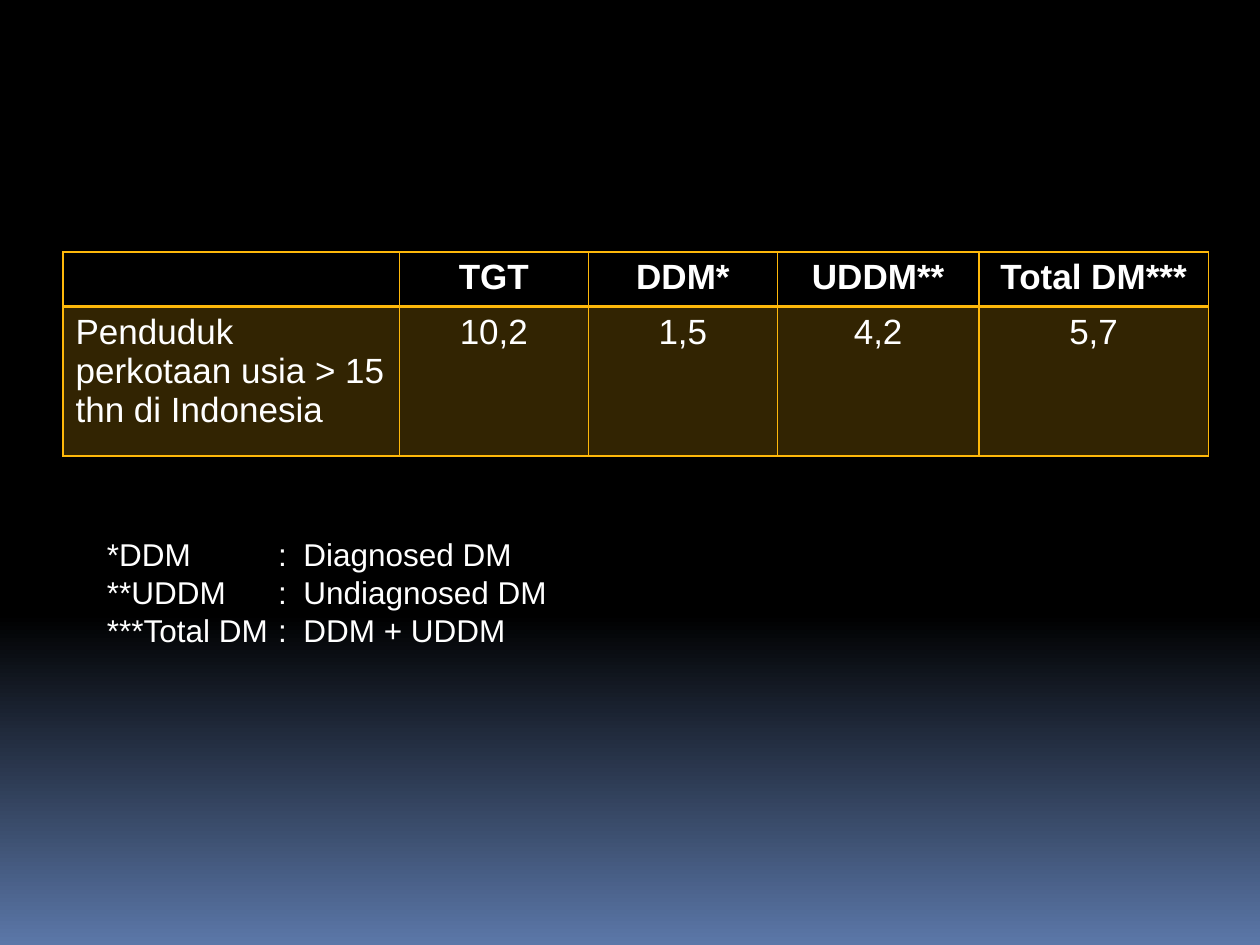
import pptx
import pptx.dml.color
import pptx.enum.text
import pptx.oxml
import pptx.oxml.ns
import pptx.util
import lxml.etree

WIDTH, HEIGHT = 10, 7.5
ALIGN = pptx.enum.text.PP_ALIGN
HEADER = ["", "TGT", "DDM*", "UDDM**", "Total DM***"]
VALUES = ["Penduduk perkotaan usia > 15 thn di Indonesia", "10,2", "1,5", "4,2", "5,7"]
LEGEND = [("*DDM", "Diagnosed DM"), ("**UDDM", "Undiagnosed DM"), ("***Total DM", "DDM + UDDM")]


def color(value):
    return pptx.dml.color.RGBColor.from_string(value)


def add_xml(parent, tag, **attributes):
    names = {name: str(value) for name, value in attributes.items()}
    return lxml.etree.SubElement(parent, pptx.oxml.ns.qn(tag), names)


class SlideBuilder:
    white, gold = "FFFFFF", "FEB80A"

    def __init__(self, deck):
        self.slide = deck.slides.add_slide(deck.slide_layouts[6])
        self.width, self.height = deck.slide_width, deck.slide_height

    def frame(self, left, top, width, height):
        """Turn shares of the slide's size into lengths."""
        return [int(share * size) for share, size in
                zip((left, top, width, height), (self.width, self.height) * 2)]

    def background(self, stops):
        fill = self.slide.background.fill
        fill.gradient()
        fill.gradient_angle = 270
        for stop, (position, value) in zip(fill.gradient_stops, stops):
            stop.position = position
            stop.color.rgb = color(value)

    def add_text(self, para, text, size, bold=False, align=ALIGN.LEFT):
        para.alignment = align
        span = para.add_run()
        span.text = text
        formats = {"name": "Arial", "size": pptx.util.Pt(size), "bold": bold}
        for name, value in formats.items():
            setattr(span.font, name, value)
        span.font.color.rgb = color(self.white)

    def borders(self, cell, widths):
        """Draw the left, right, top and bottom lines, which come before the fill."""
        properties = cell._tc.get_or_add_tcPr()
        for index, (side, points) in enumerate(zip("LRTB", widths)):
            line = add_xml(properties, f"a:ln{side}", w=pptx.util.Pt(points))
            add_xml(add_xml(line, "a:solidFill"), "a:srgbClr", val=self.gold)
            properties.insert(index, line)

    def tint(self, cell, percent):
        cell.fill.solid()
        cell.fill.fore_color.rgb = color(self.gold)
        for tone in cell._tc.tcPr.iter(pptx.oxml.ns.qn("a:srgbClr")):
            add_xml(tone, "a:alpha", val=percent * 1000)

    def table(self, place, columns, heights, rows):
        table = self.slide.shapes.add_table(len(rows), len(columns), *self.frame(*place)).table
        table.first_row = table.horz_banding = False
        for column, share in zip(table.columns, columns):
            column.width = int(share * self.width)
        for row, share in zip(table.rows, heights):
            row.height = int(share * self.height)
        for row_index, texts in enumerate(rows):
            is_header = row_index == 0
            for column_index, text in enumerate(texts):
                cell = table.cell(row_index, column_index)
                if is_header:
                    cell.fill.background()
                else:
                    self.tint(cell, 20)
                self.borders(cell, (1, 1, 1, 2) if is_header else (1, 1, 2, 1))
                if text:
                    align = ALIGN.CENTER if is_header or column_index else ALIGN.LEFT
                    self.add_text(cell.text_frame.paragraphs[0], text, 20, is_header, align)

    def legend(self, place, entries, tabs):
        """List terms and meanings, lined up at tab stops given as shares of the width."""
        box = self.slide.shapes.add_textbox(*self.frame(*place)).text_frame
        box.word_wrap = True
        for index, (term, meaning) in enumerate(entries):
            para = box.add_paragraph() if index else box.paragraphs[0]
            self.add_text(para, f"{term}\t:\t{meaning}", 18)
            stops = add_xml(para._p.get_or_add_pPr(), "a:tabLst")
            for share in tabs:
                add_xml(stops, "a:tab", pos=int(share * self.width), algn="l")


def main():
    deck = pptx.Presentation()
    deck.slide_width = pptx.util.Inches(WIDTH)
    deck.slide_height = pptx.util.Inches(HEIGHT)
    builder = SlideBuilder(deck)
    builder.background([(0.65, "000000"), (1, "5B77A8")])
    columns = [share / WIDTH for share in (2.67, 1.5, 1.5, 1.6, 1.82)]
    heights = [share / HEIGHT for share in (0.43, 1.19)]
    builder.table((0.05, 2 / HEIGHT, sum(columns), sum(heights)),
                  columns, heights, [HEADER, VALUES])
    builder.legend((0.075, 0.56, 0.37, 0.13), LEGEND, (0.136, 0.156))
    deck.save("out.pptx")


if __name__ == "__main__":
    main()
